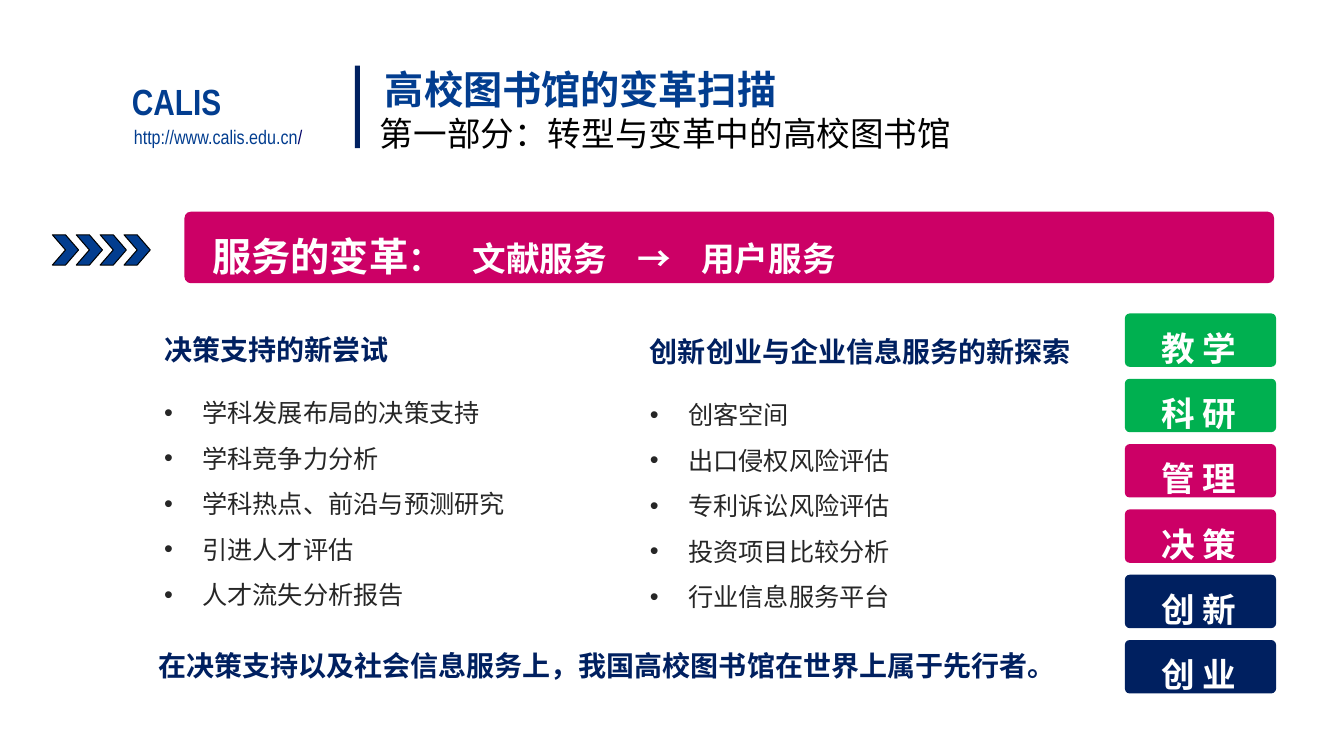
import pptx
import pptx.util
from lxml import etree
from pptx.dml.color import RGBColor
from pptx.enum.shapes import MSO_SHAPE
from pptx.enum.text import MSO_ANCHOR, PP_ALIGN
from pptx.oxml.ns import qn

CELL = pptx.util.Inches(0.1)  # side of one grid cell
COLUMNS, ROWS = 133.33, 75

BLUE = RGBColor(0x02, 0x3D, 0x8F)
INDIGO = RGBColor(0x00, 0x00, 0x66)
NAVY = RGBColor(0x00, 0x20, 0x60)
PINK = RGBColor(0xCC, 0x00, 0x66)
GREEN = RGBColor(0x00, 0xB0, 0x50)
GREY = RGBColor(0x26, 0x26, 0x26)
BLACK = RGBColor(0, 0, 0)
WHITE = RGBColor(0xFF, 0xFF, 0xFF)

NARROW = "Arial Narrow"
HAN = "Noto Sans CJK SC"

TAGS = [("教 学", GREEN), ("科 研", GREEN), ("管 理", PINK),
        ("决 策", PINK), ("创 新", NAVY), ("创 业", NAVY)]
DECISION_ITEMS = ["学科发展布局的决策支持", "学科竞争力分析", "学科热点、前沿与预测研究",
                  "引进人才评估", "人才流失分析报告"]
INNOVATION_ITEMS = ["创客空间", "出口侵权风险评估", "专利诉讼风险评估",
                    "投资项目比较分析", "行业信息服务平台"]


def cells(*counts):
    return [round(count * CELL) for count in counts]


def add_block(page, kind, area, fill, outline=None, corner=None):
    block = page.shapes.add_shape(kind, *cells(*area))
    block.shadow.inherit = False
    block.fill.solid()
    block.fill.fore_color.rgb = fill
    if outline is None:
        block.line.fill.background()
    else:
        block.line.color.rgb = outline
        block.line.width = pptx.util.Pt(0.75)
    if corner is not None:
        block.adjustments[0] = corner


def add_box(page, area):
    box = page.shapes.add_textbox(*cells(*area))
    box.text_frame.word_wrap = True
    return box.text_frame


def add_span(para, text, size, color, bold=False, font=HAN):
    span = para.add_run()
    span.text = text
    span.font.size = pptx.util.Pt(size)
    span.font.bold = bold
    span.font.name = font
    span.font.color.rgb = color
    east_asian = etree.SubElement(span.font._element, qn("a:ea"))
    east_asian.set("typeface", HAN)


def add_line(page, area, text, size, color, bold=False, font=HAN):
    """Add a text box with one paragraph and return that paragraph."""
    para = add_box(page, area).paragraphs[0]
    add_span(para, text, size, color, bold, font)
    return para


def add_bullet(para):
    properties = para._p.get_or_add_pPr()
    properties.set("marL", str(cells(3.8)[0]))
    properties.set("indent", str(cells(-3.8)[0]))
    etree.SubElement(properties, qn("a:buFont")).set("typeface", "Arial")
    etree.SubElement(properties, qn("a:buChar")).set("char", "•")


def add_tab_stops(para, stops):
    tab_list = etree.SubElement(para._p.get_or_add_pPr(), qn("a:tabLst"))
    for stop in cells(*stops):
        tab = etree.SubElement(tab_list, qn("a:tab"))
        tab.set("pos", str(stop))
        tab.set("algn", "l")


def add_header(page):
    name = add_box(page, (12.1, 7, 18.3, 5.7))
    name.vertical_anchor = MSO_ANCHOR.BOTTOM
    name.paragraphs[0].line_spacing = 0.9
    add_span(name.paragraphs[0], "CALIS", 26, BLUE, True, NARROW)
    address = add_line(page, (12.3, 11.9, 22, 3.4), "http://www.calis.edu.cn",
                       14, BLUE, font=NARROW)
    add_span(address, "/", 14, INDIGO, font=NARROW)
    add_block(page, MSO_SHAPE.RECTANGLE, (35.2, 6.5, 0.5, 8.2), NAVY)
    add_line(page, (37.2, 6, 94.3, 5.7), "高校图书馆的变革扫描", 28, BLUE, True, "Calibri")
    add_line(page, (36.7, 10.7, 82.2, 5), "第一部分：转型与变革中的高校图书馆", 24, BLACK)


def add_banner(page):
    add_block(page, MSO_SHAPE.ROUNDED_RECTANGLE, (18.3, 21, 108.1, 7.1), PINK, corner=0.09)
    for index in range(4):
        add_block(page, MSO_SHAPE.CHEVRON, (5.2 + 2.37 * index, 23.3, 2.6, 3), BLUE, BLACK)
    banner = add_line(page, (20.1, 20.2, 106.3, 8.1), "服务的变革", 28, WHITE, True, NARROW)
    banner.line_spacing = 1.5
    add_tab_stops(banner, (25.8, 42.2, 48.5))
    add_span(banner, "：\t文献服务\t→\t用户服务", 24, WHITE, True, NARROW)


def add_topic(page, area, heading, items):
    """Add a bold heading with a bulleted list below it."""
    frame = add_box(page, area)
    title = frame.paragraphs[0]
    title.line_spacing = 1.5
    title.space_after = pptx.util.Pt(12)
    add_span(title, heading, 20, NAVY, True)
    for item in items:
        para = frame.add_paragraph()
        add_bullet(para)
        para.line_spacing = 1.5
        add_span(para, item, 18, GREY)


def add_tags(page):
    for index, (label, color) in enumerate(TAGS):
        top = 31.1 + 6.48 * index
        add_block(page, MSO_SHAPE.ROUNDED_RECTANGLE, (111.6, top, 15, 5.3), color, corner=0.09)
        para = add_line(page, (109.5, top - 1.1, 18.8, 6.3), label, 24, WHITE, True)
        para.alignment = PP_ALIGN.CENTER
        para.line_spacing = 1.5


def main():
    deck = pptx.Presentation()
    deck.slide_width, deck.slide_height = cells(COLUMNS, ROWS)
    page = deck.slides.add_slide(deck.slide_layouts[6])
    add_header(page)
    add_banner(page)
    add_topic(page, (15.3, 30.8, 37, 30.5), "决策支持的新尝试", DECISION_ITEMS)
    add_topic(page, (63.5, 31, 47, 30.5), "创新创业与企业信息服务的新探索", INNOVATION_ITEMS)
    add_tags(page)
    add_line(page, (14.7, 63.8, 94, 4.4),
             "在决策支持以及社会信息服务上，我国高校图书馆在世界上属于先行者。", 20, NAVY, True)
    deck.save("out.pptx")


if __name__ == "__main__":
    main()
